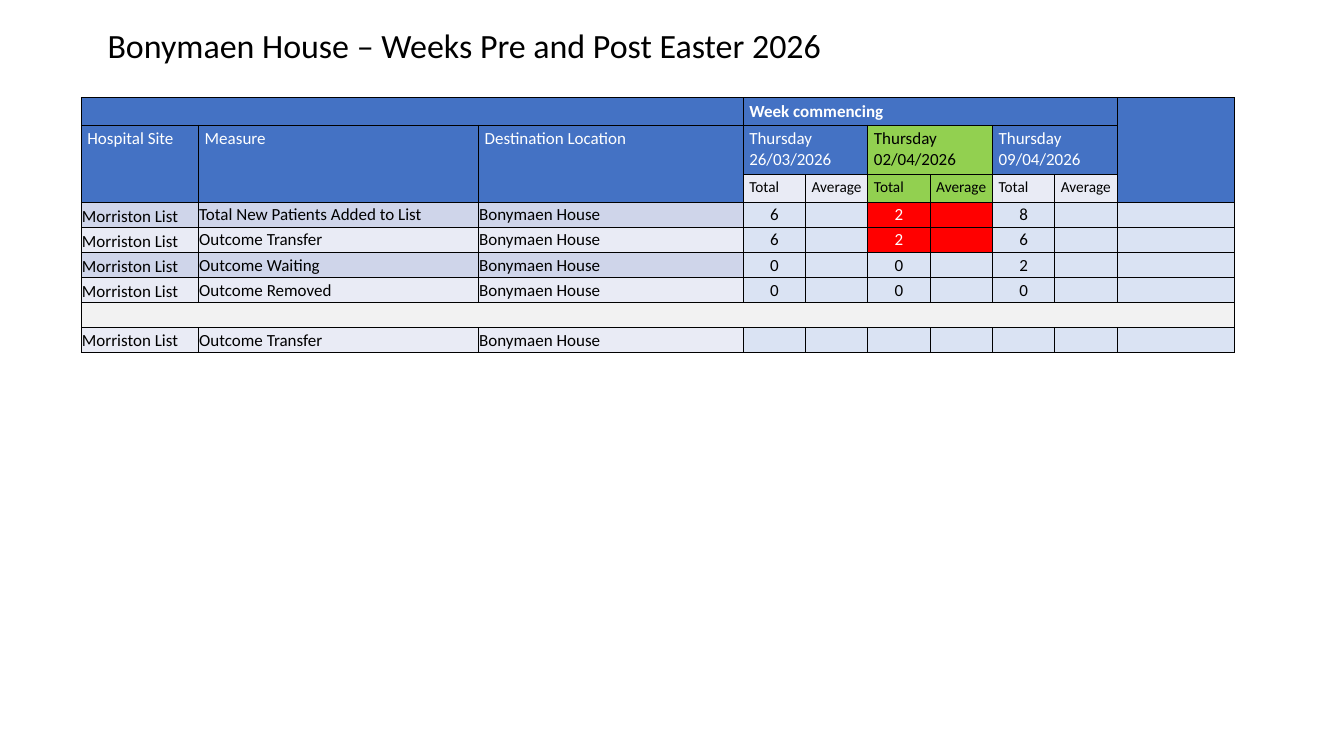
"""Build the Bonymaen House slide comparing the weeks around Easter 2026."""
from dataclasses import dataclass

from lxml.etree import SubElement
from pptx import Presentation
from pptx.dml.color import RGBColor
from pptx.enum.text import MSO_ANCHOR, MSO_AUTO_SIZE, PP_ALIGN
from pptx.oxml.ns import qn
from pptx.table import Table, _Cell
from pptx.text.text import _Paragraph
from pptx.util import Inches, Pt

BLACK = RGBColor(0x00, 0x00, 0x00)
WHITE = RGBColor(0xFF, 0xFF, 0xFF)
BLUE = RGBColor(0x44, 0x72, 0xC4)
GREEN = RGBColor(0x92, 0xD0, 0x50)
RED = RGBColor(0xFF, 0x00, 0x00)
GREY = RGBColor(0xF2, 0xF2, 0xF2)
PALE_BLUE = RGBColor(0xDA, 0xE3, 0xF3)
BAND_DARK = RGBColor(0xCF, 0xD5, 0xEA)
BAND_LIGHT = RGBColor(0xE9, 0xEB, 0xF5)

COL_WIDTHS = [1.92, 4.58, 4.33] + [1.02] * 6 + [1.92]
ROW_HEIGHTS = [0.45, 0.81, 0.45] + [0.41] * 6
FIRST_WEEK_COL, LAST_COL = 3, 9
TIGHT = {"margin_left": Inches(0.01), "margin_right": Inches(0.01),
         "margin_top": Inches(0.01), "margin_bottom": 0}


@dataclass(frozen=True)
class Box:
    row: int
    col: int
    fill: RGBColor
    text: str = ""
    color: RGBColor = BLACK
    rows: int = 1
    cols: int = 1
    size: int = 20
    bold: bool = False
    tight: bool = False
    anchor: MSO_ANCHOR = MSO_ANCHOR.TOP
    align: PP_ALIGN = PP_ALIGN.LEFT


@dataclass(frozen=True)
class Week:
    day: str
    fill: RGBColor
    color: RGBColor
    sub_fill: RGBColor


@dataclass(frozen=True)
class Measure:
    row: int
    name: str
    band: RGBColor
    totals: tuple[str, str, str]
    alert: bool = False
    site_anchor: MSO_ANCHOR = MSO_ANCHOR.BOTTOM


WEEKS = [
    Week("Thursday 26/03/2026", BLUE, WHITE, BAND_LIGHT),
    Week("Thursday 02/04/2026", GREEN, BLACK, GREEN),
    Week("Thursday 09/04/2026", BLUE, WHITE, BAND_LIGHT),
]
MEASURES = [
    Measure(3, "Total New Patients Added to List", BAND_DARK, ("6", "2", "8"), True),
    Measure(4, "Outcome Transfer", BAND_LIGHT, ("6", "2", "6"), True),
    Measure(5, "Outcome Waiting", BAND_DARK, ("0", "0", "2")),
    Measure(6, "Outcome Removed", BAND_LIGHT, ("0", "0", "0")),
    Measure(8, "Outcome Transfer", BAND_LIGHT, ("", "", ""),
            site_anchor=MSO_ANCHOR.MIDDLE),
]


def set_all(obj: object, values: dict[str, object]) -> None:
    for name, value in values.items():
        setattr(obj, name, value)


def write(p: _Paragraph, text: str, size: int, color: RGBColor,
          bold: bool = False) -> None:
    r = p.add_run()
    r.text = text
    set_all(r.font, {"name": "Calibri", "size": Pt(size), "bold": bold})
    r.font.color.rgb = color


def add_borders(cell: _Cell) -> None:
    tc_pr = cell._tc.get_or_add_tcPr()
    for side in ("a:lnL", "a:lnR", "a:lnT", "a:lnB"):
        ln = SubElement(tc_pr, qn(side), w=str(Pt(1)))
        SubElement(SubElement(ln, qn("a:solidFill")), qn("a:srgbClr"), val=str(BLACK))


def header_boxes() -> list[Box]:
    boxes = [
        Box(0, 0, BLUE, cols=3),
        Box(0, FIRST_WEEK_COL, BLUE, "Week commencing", WHITE, cols=6, bold=True),
        Box(0, LAST_COL, BLUE, rows=3),
    ]
    for col, label in enumerate(("Hospital Site", "Measure", "Destination Location")):
        boxes.append(Box(1, col, BLUE, label, WHITE, rows=2))
    for i, week in enumerate(WEEKS):
        col = FIRST_WEEK_COL + 2 * i
        boxes.append(Box(1, col, week.fill, week.day, week.color, cols=2))
        for j, label in enumerate(("Total", "Average")):
            boxes.append(Box(2, col + j, week.sub_fill, label, size=18))
    return boxes


def measure_boxes(m: Measure) -> list[Box]:
    boxes = []
    for col, text in enumerate(("Morriston List", m.name, "Bonymaen House")):
        anchor = m.site_anchor if col == 0 else MSO_ANCHOR.MIDDLE
        boxes.append(Box(m.row, col, m.band, text, tight=True, anchor=anchor))
    for i, total in enumerate(m.totals):
        col = FIRST_WEEK_COL + 2 * i
        alert = m.alert and i == 1
        fill, color = (RED, WHITE) if alert else (PALE_BLUE, BLACK)
        boxes.append(Box(m.row, col, fill, total, color, tight=True,
                         anchor=MSO_ANCHOR.MIDDLE, align=PP_ALIGN.CENTER))
        boxes.append(Box(m.row, col + 1, fill, tight=True))
    boxes.append(Box(m.row, LAST_COL, PALE_BLUE, tight=True))
    return boxes


def draw_box(table: Table, box: Box) -> None:
    cell = table.cell(box.row, box.col)
    if box.rows * box.cols > 1:
        cell.merge(table.cell(box.row + box.rows - 1, box.col + box.cols - 1))
    cell.fill.solid()
    cell.fill.fore_color.rgb = box.fill
    set_all(cell, {"vertical_anchor": box.anchor, **(TIGHT if box.tight else {})})
    if box.text:
        p = cell.text_frame.paragraphs[0]
        p.alignment = box.align
        write(p, box.text, box.size, box.color, box.bold)


def main() -> None:
    prs = Presentation()
    set_all(prs, {"slide_width": Inches(21.99), "slide_height": Inches(12.37)})
    s = prs.slides.add_slide(prs.slide_layouts[5])

    title = s.shapes.title
    set_all(title, {"left": Inches(1.66), "top": Inches(0.43),
                    "width": Inches(19.25), "height": Inches(0.61)})
    tf = title.text_frame
    set_all(tf, {"word_wrap": True, "auto_size": MSO_AUTO_SIZE.NONE,
                 "vertical_anchor": MSO_ANCHOR.TOP})
    p = tf.paragraphs[0]
    set_all(p, {"alignment": PP_ALIGN.LEFT, "line_spacing": 0.9})
    write(p, "Bonymaen House – Weeks Pre and Post Easter 2026", 40, BLACK)

    table = s.shapes.add_table(
        len(ROW_HEIGHTS), len(COL_WIDTHS), Inches(1.33), Inches(1.6),
        Inches(sum(COL_WIDTHS)), Inches(sum(ROW_HEIGHTS))).table
    set_all(table, {"first_row": False, "horz_banding": False})
    for column, width in zip(table.columns, COL_WIDTHS):
        column.width = Inches(width)
    for row, height in zip(table.rows, ROW_HEIGHTS):
        row.height = Inches(height)
    for cell in table.iter_cells():
        add_borders(cell)

    boxes = header_boxes() + [Box(7, 0, GREY, cols=len(COL_WIDTHS), tight=True)]
    for m in MEASURES:
        boxes += measure_boxes(m)
    for box in boxes:
        draw_box(table, box)
    prs.save("out.pptx")


if __name__ == "__main__":
    main()
